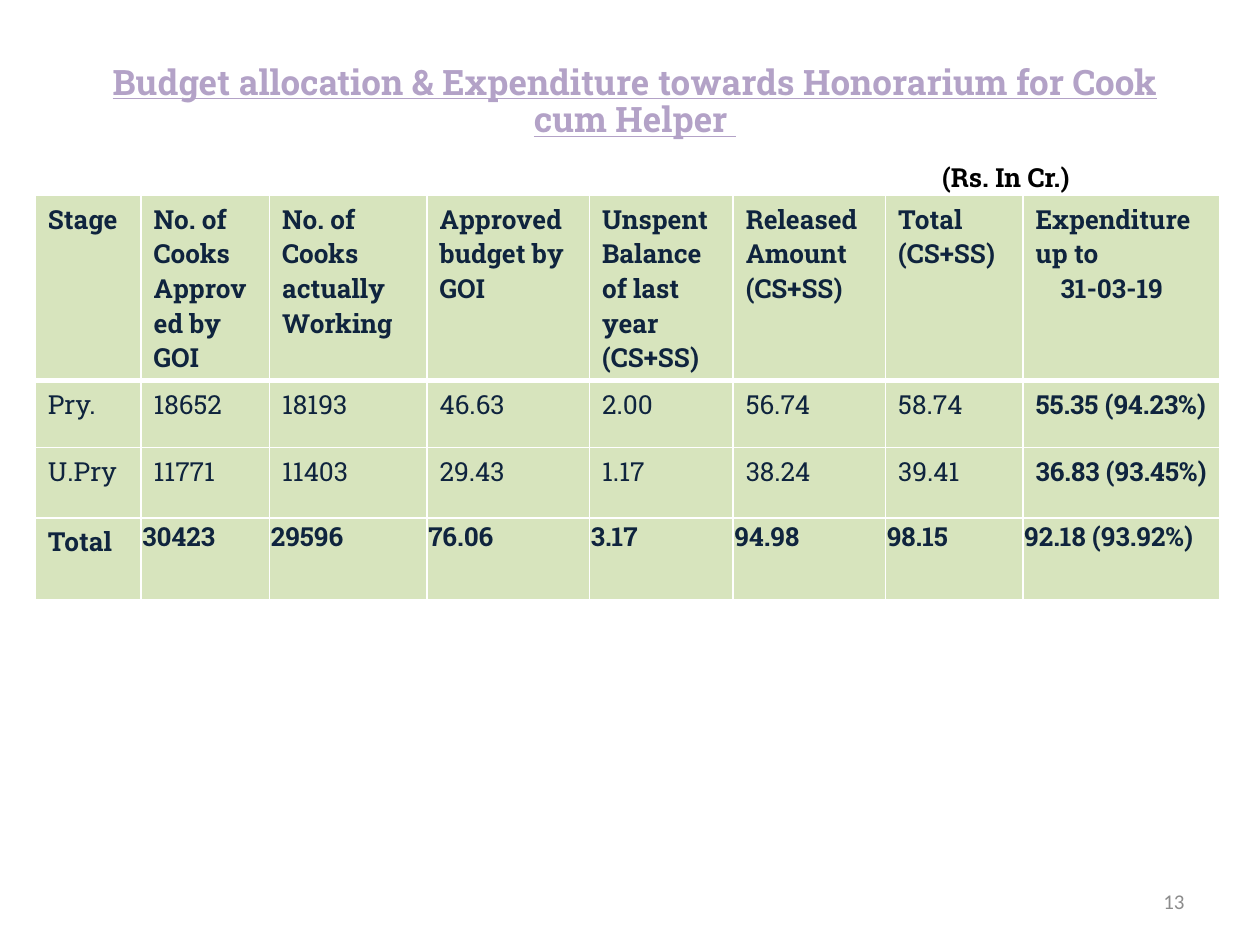
from lxml import etree
from pptx import Presentation
from pptx import util as u
from pptx.dml.color import RGBColor
from pptx.enum import text
from pptx.oxml import ns

LAVENDER = RGBColor(0xB3, 0xA2, 0xC7)
NAVY = RGBColor(0x0F, 0x24, 0x3E)
GREEN = RGBColor(0xD7, 0xE4, 0xBD)
GREY = RGBColor(0x8C, 0x8C, 0x8C)
BLACK = RGBColor(0, 0, 0)
WHITE = RGBColor(0xFF, 0xFF, 0xFF)

COLUMN_WIDTHS = [0.84, 1.02, 1.25, 1.29, 1.14, 1.21, 1.09, 1.56]
ROW_HEIGHTS = [1.47, 0.53, 0.56, 0.65]
ROWS = [
    ["Stage", "No. of Cooks Approved by GOI", "No. of Cooks actually Working",
     "Approved budget by GOI", "Unspent Balance of last year (CS+SS)",
     "Released Amount (CS+SS)", "Total (CS+SS)", "Expenditure up to\n31-03-19"],
    ["Pry.", "18652", "18193", "46.63", "2.00", "56.74", "58.74", "55.35 (94.23%)"],
    ["U.Pry", "11771", "11403", "29.43", "1.17", "38.24", "39.41", "36.83 (93.45%)"],
    ["Total", "30423", "29596", "76.06", "3.17", "94.98", "98.15", "92.18 (93.92%)"],
]


def write(frame, content, size=15, font="Roboto Slab", color=NAVY, bold=True,
          underline=False, align=text.PP_ALIGN.LEFT, spacing=1.0, indents=(0,)):
    frame.word_wrap = True
    for index, line in enumerate(content.split("\n")):
        paragraph = frame.paragraphs[0] if index == 0 else frame.add_paragraph()
        paragraph.alignment = align
        paragraph.line_spacing = spacing
        indent = indents[index] if index < len(indents) else 0
        if indent:
            paragraph._p.get_or_add_pPr().set("marL", str(u.Inches(indent)))
        run = paragraph.add_run()
        run.text = line
        run.font.size = u.Pt(size)
        run.font.name = font
        run.font.bold = bold
        run.font.underline = underline
        run.font.color.rgb = color


class BudgetSlide:
    def __init__(self, slide, border=WHITE, fill=GREEN):
        self.slide, self.border, self.fill = slide, border, fill

    def add_text(self, content, left, top, width, height,
                 anchor=text.MSO_ANCHOR.MIDDLE, **style):
        box = self.slide.shapes.add_textbox(*map(u.Inches, (left, top, width, height)))
        write(box.text_frame, content, **style)
        box.text_frame.vertical_anchor = anchor

    def add_borders(self, cell, top, bottom):
        properties = cell._tc.get_or_add_tcPr()
        for side, points in zip("LRTB", (1, 1, top, bottom)):
            line = etree.SubElement(properties, ns.qn("a:ln" + side), w=str(u.Pt(points)))
            paint = etree.SubElement(line, ns.qn("a:solidFill"))
            etree.SubElement(paint, ns.qn("a:srgbClr"), val=str(self.border))

    def add_table(self, rows, widths, heights, left, top):
        shape = self.slide.shapes.add_table(
            len(rows), len(widths), u.Inches(left), u.Inches(top),
            u.Inches(sum(widths)), u.Inches(sum(heights)))
        table = shape.table
        for column, width in zip(table.columns, widths):
            column.width = u.Inches(width)
        for row, height in zip(table.rows, heights):
            row.height = u.Inches(height)
        last_row, last_column = len(rows) - 1, len(widths) - 1
        for r, values in enumerate(rows):
            for c, value in enumerate(values):
                cell = table.cell(r, c)
                self.add_borders(cell, 3 if r == 1 else 1, 3 if r == 0 else 1)
                cell.fill.solid()
                cell.fill.fore_color.rgb = self.fill
                if r == last_row and c > 0:
                    cell.margin_left = cell.margin_top = cell.margin_right = u.Inches(0.01)
                    cell.margin_bottom = 0
                write(cell.text_frame, value, indents=(0, 0.2),
                      bold=r in (0, last_row) or c == last_column)


def main():
    """Build the cook honorarium budget slide."""
    presentation = Presentation()
    presentation.slide_width, presentation.slide_height = u.Inches(10), u.Inches(7.5)
    page = BudgetSlide(presentation.slides.add_slide(presentation.slide_layouts[6]))
    page.add_text("Budget allocation & Expenditure towards Honorarium for Cook cum Helper ",
                  0.5, 0.23, 9.08, 1.17, size=20, color=LAVENDER, underline=True,
                  align=text.PP_ALIGN.CENTER, spacing=0.9)
    page.add_text("13", 7.17, 6.95, 2.33, 0.4, size=12, font="Calibri", color=GREY,
                  bold=False, align=text.PP_ALIGN.RIGHT)
    page.add_table(ROWS, COLUMN_WIDTHS, ROW_HEIGHTS, 0.28, 1.55)
    page.add_text("(Rs. In Cr.)", 6.97, 1.23, 2, 0.35, anchor=text.MSO_ANCHOR.TOP,
                  color=BLACK, indents=(0.41,))
    presentation.save("out.pptx")


if __name__ == "__main__":
    main()
